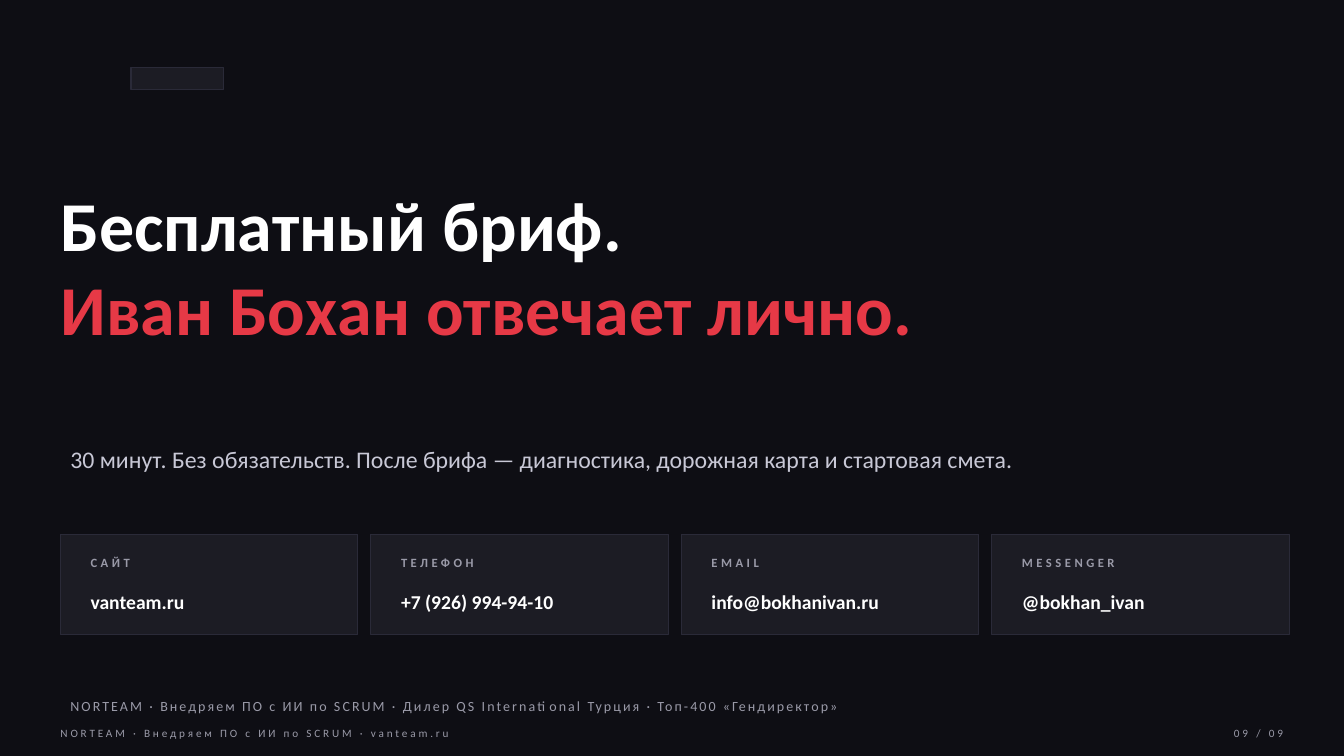
from pptx import Presentation
from pptx.dml.color import RGBColor
from pptx.enum.shapes import MSO_SHAPE
from pptx.enum.text import MSO_ANCHOR, MSO_AUTO_SIZE, PP_ALIGN
from pptx.util import Pt

COLORS = {
    "back": "0E0E14",
    "card": "1C1C24",
    "edge": "2A2A38",
    "white": "FFFFFF",
    "red": "E63946",
    "pale": "C8C8D6",
    "gray": "9A9AA8",
}
FONT = "Calibri"
LEFT = 43.2
WIDTH = 864
CARD_TOP = 381.6
CARD_WIDTH = 212.4
CARD_STEP = 221.76
CARDS = [
    ("САЙТ", "vanteam.ru"),
    ("ТЕЛЕФОН", "+7 (926) 994-94-10"),
    ("EMAIL", "info@bokhanivan.ru"),
    ("MESSENGER", "@bokhan_ivan"),
]


def color(name):
    return RGBColor.from_string(COLORS[name])


def add_run(para, text, size, tint="white", bold=False, track=0):
    run = para.add_run()
    run.text = text
    font = run.font
    font.name = FONT
    font.size = Pt(size)
    font.bold = bold
    font.color.rgb = color(tint)
    if track:
        font._element.set("spc", str(int(track * 100)))


def set_frame(frame, anchor=MSO_ANCHOR.MIDDLE, inset=True):
    frame.word_wrap = True
    frame.auto_size = MSO_AUTO_SIZE.NONE
    frame.vertical_anchor = anchor
    if not inset:
        frame.margin_left = frame.margin_right = 0
        frame.margin_top = frame.margin_bottom = 0


def add_text(slide, text, box, inset=True, align=PP_ALIGN.LEFT, **style):
    frame = slide.shapes.add_textbox(*map(Pt, box)).text_frame
    set_frame(frame, inset=inset)
    para = frame.paragraphs[0]
    para.alignment = align
    add_run(para, text, **style)


def add_title(slide, lines, box):
    title = slide.shapes.title
    title.left, title.top, title.width, title.height = map(Pt, box)
    set_frame(title.text_frame, MSO_ANCHOR.TOP, inset=False)
    para = title.text_frame.paragraphs[0]
    para.alignment = PP_ALIGN.LEFT
    para.space_after = Pt(4)
    for row, (text, tint) in enumerate(lines):
        if row:
            para.add_line_break()
        add_run(para, text, 50, tint, bold=True)


def add_panel(slide, box):
    panel = slide.shapes.add_shape(MSO_SHAPE.RECTANGLE, *map(Pt, box))
    panel.shadow.inherit = False
    panel.fill.solid()
    panel.fill.fore_color.rgb = color("card")
    panel.line.color.rgb = color("edge")
    panel.line.width = Pt(0.75)


def add_card(slide, left, label, value):
    add_panel(slide, (left, CARD_TOP, CARD_WIDTH, 72))
    inner, width = left + 14.4, CARD_WIDTH - 28.8
    add_text(slide, label, (inner, CARD_TOP + 10.8, width, 18),
             size=9, tint="gray", bold=True, track=2.5)
    add_text(slide, value, (inner, CARD_TOP + 30.24, width, 36),
             size=14, bold=True)


def main():
    deck = Presentation()
    deck.slide_width, deck.slide_height = Pt(960), Pt(540)
    slide = deck.slides.add_slide(deck.slide_layouts[5])
    slide.background.fill.solid()
    slide.background.fill.fore_color.rgb = color("back")

    add_panel(slide, (93.6, 48, 66, 16))
    add_title(slide, [("Бесплатный бриф.", "white"),
                      ("Иван Бохан отвечает лично.", "red")],
              (LEFT, 129.6, WIDTH, 187.2))
    add_text(slide, "30 минут. Без обязательств. После брифа — диагностика, "
             "дорожная карта и стартовая смета.",
             (LEFT, 302.4, WIDTH, 50.4), size=17, tint="pale")

    for col, (label, value) in enumerate(CARDS):
        add_card(slide, LEFT + col * CARD_STEP, label, value)

    motto = "NORTEAM · Внедряем ПО с ИИ по SCRUM · "
    add_text(slide, motto + "Дилер QS International Турция · Топ-400 «Гендиректор»",
             (LEFT, 493.2, WIDTH, 21.6), size=10, tint="gray", track=1.5)
    foot = dict(inset=False, size=8, tint="gray", track=2)
    add_text(slide, motto + "vanteam.ru", (LEFT, 514.8, 648, 18), **foot)
    add_text(slide, "09 / 09", (801.36, 514.8, 115.2, 18),
             align=PP_ALIGN.RIGHT, **foot)
    deck.save("out.pptx")


if __name__ == "__main__":
    main()
